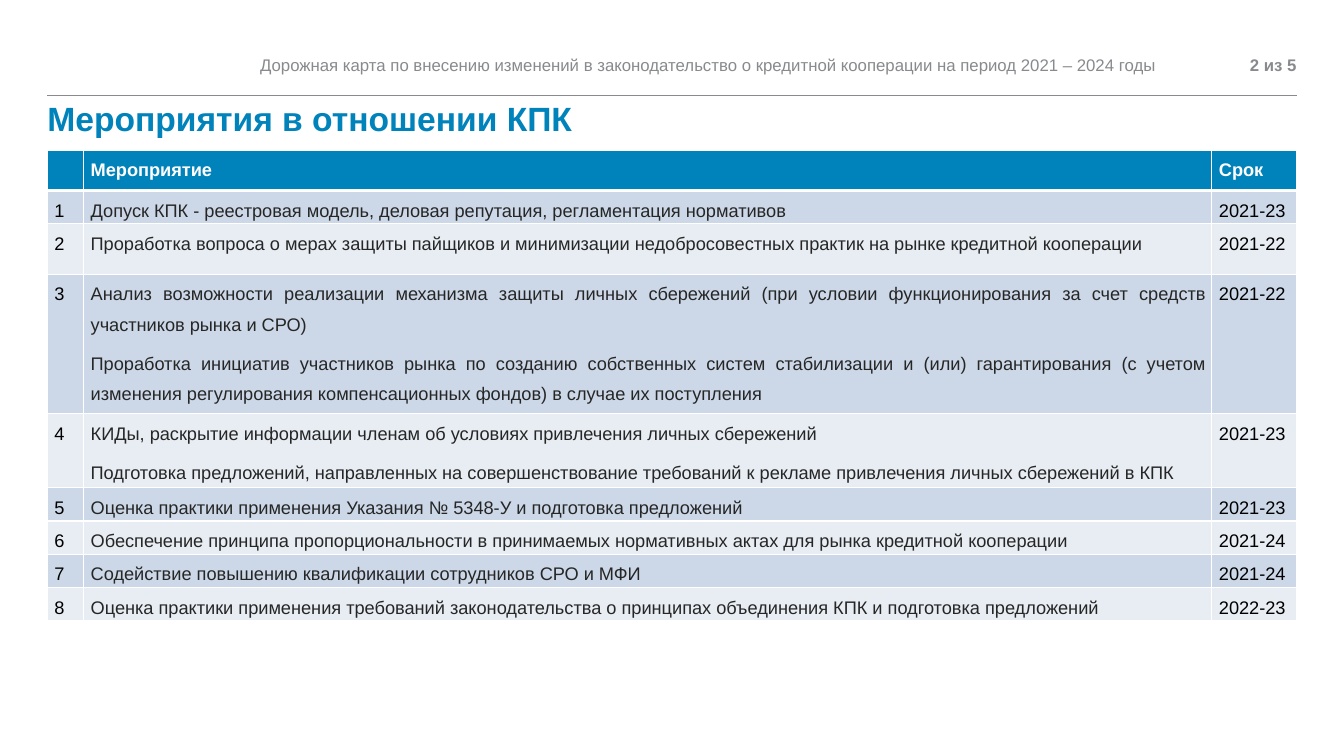
from lxml import etree
from pptx import Presentation
from pptx.dml.color import RGBColor
from pptx.enum import shapes, text
from pptx.oxml import ns
from pptx.util import Inches, Pt

BLUE = RGBColor(0x00, 0x82, 0xBB)
GREY = RGBColor(0x88, 0x8A, 0x8D)
WHITE = RGBColor(0xFF, 0xFF, 0xFF)
BLACK = RGBColor(0x00, 0x00, 0x00)
DARK = RGBColor(0x26, 0x26, 0x26)
BAND_ODD = RGBColor(0xCC, 0xD8, 0xE7)
BAND_EVEN = RGBColor(0xE7, 0xED, 0xF3)

LEFT, RIGHT = 0.47, 12.86
COLS = [0.36, 11.19, 0.84]
ROWS = [0.4, 0.33, 0.5, 0.8, 0.7] + [0.33] * 4
HEADER = [[], ["Мероприятие"], ["Срок"]]
MEASURES = [
    (["Допуск КПК - реестровая модель, деловая репутация, регламентация нормативов"], "2021-23"),
    (["Проработка вопроса о мерах защиты пайщиков и минимизации недобросовестных практик "
      "на рынке кредитной кооперации"], "2021-22"),
    (["Анализ возможности реализации механизма защиты личных сбережений (при условии "
      "функционирования за счет средств участников рынка и СРО)",
      "Проработка инициатив участников рынка по созданию собственных систем стабилизации "
      "и (или) гарантирования (с учетом изменения регулирования компенсационных фондов) "
      "в случае их поступления"], "2021-22"),
    (["КИДы, раскрытие информации членам об условиях привлечения личных сбережений",
      "Подготовка предложений, направленных на совершенствование требований к рекламе "
      "привлечения личных сбережений в КПК"], "2021-23"),
    (["Оценка практики применения Указания № 5348-У и подготовка предложений"], "2021-23"),
    (["Обеспечение принципа пропорциональности в принимаемых нормативных актах "
      "для рынка кредитной кооперации"], "2021-24"),
    (["Содействие повышению квалификации сотрудников СРО и МФИ"], "2021-24"),
    (["Оценка практики применения требований законодательства о принципах объединения КПК "
      "и подготовка предложений"], "2022-23"),
]


def apply(obj, values):
    for name, value in values.items():
        setattr(obj, name, value)


class Deck:
    font = "Arial"
    cell_paragraph = {"alignment": text.PP_ALIGN.JUSTIFY, "line_spacing": 1.5,
                      "space_after": Pt(6)}
    cell_margins = {"margin_left": Inches(0.07), "margin_right": Inches(0.07),
                    "margin_top": 0, "margin_bottom": 0}

    def __init__(self):
        self.prs = Presentation()
        apply(self.prs, {"slide_width": Inches(13.33), "slide_height": Inches(7.5)})
        self.slide = self.prs.slides.add_slide(self.prs.slide_layouts[6])

    def fill_paragraph(self, p, words, size, color, bold, para):
        apply(p, para)
        r = p.add_run()
        r.text = words
        apply(r.font, {"name": self.font, "size": Pt(size), "bold": bold})
        r.font.color.rgb = color

    def text(self, box, words, size, color, bold=False, anchor=text.MSO_ANCHOR.MIDDLE, **para):
        tf = self.slide.shapes.add_textbox(*map(Inches, box)).text_frame
        apply(tf, {"word_wrap": True, "vertical_anchor": anchor, "margin_left": 0,
                   "margin_right": 0, "margin_top": 0, "margin_bottom": 0})
        self.fill_paragraph(tf.paragraphs[0], words, size, color, bold, para)

    def rule(self, y, color, width):
        """Draw a horizontal line across the content area."""
        ends = map(Inches, (LEFT, y, RIGHT, y))
        line = self.slide.shapes.add_connector(shapes.MSO_CONNECTOR.STRAIGHT, *ends)
        line.line.color.rgb = color
        line.line.width = Pt(width)
        etree.SubElement(line._element.spPr, ns.qn("a:effectLst"))

    def border(self, cell, side, width):
        ln = etree.SubElement(cell._tc.get_or_add_tcPr(), ns.qn(f"a:ln{side}"), w=str(Pt(width)))
        fill = etree.SubElement(ln, ns.qn("a:solidFill"))
        etree.SubElement(fill, ns.qn("a:srgbClr"), val=str(WHITE))

    def cell(self, cell, lines, color, fill, bold, top, bottom):
        apply(cell, self.cell_margins)
        for side, width in (("L", 1), ("R", 1), ("T", top), ("B", bottom)):
            self.border(cell, side, width)
        cell.fill.solid()
        cell.fill.fore_color.rgb = fill
        tf = cell.text_frame
        for i, words in enumerate(lines):
            p = tf.add_paragraph() if i else tf.paragraphs[0]
            self.fill_paragraph(p, words, 13, color, bold, self.cell_paragraph)

    def table(self, top, header, body):
        frame = self.slide.shapes.add_table(
            len(ROWS), len(COLS), Inches(LEFT), Inches(top), Inches(sum(COLS)), Inches(sum(ROWS)))
        tbl = frame.table
        for col, width in zip(tbl.columns, COLS):
            col.width = Inches(width)
        for row, height in zip(tbl.rows, ROWS):
            row.height = Inches(height)
        for c, lines in enumerate(header):
            self.cell(tbl.cell(0, c), lines, WHITE, BLUE, True, 1, 3)
        for n, (measure, term) in enumerate(body, 1):
            fill = BAND_ODD if n % 2 else BAND_EVEN
            columns = (([str(n)], BLACK), (measure, DARK), ([term], BLACK))
            for c, (lines, color) in enumerate(columns):
                self.cell(tbl.cell(n, c), lines, color, fill, False, 3 if n == 1 else 1, 1)


def main():
    deck = Deck()
    deck.rule(0.95, GREY, 0.5)
    deck.text((LEFT, 1.02, 12.39, 0.66), "Мероприятия в отношении КПК", 24, BLUE, True,
              text.MSO_ANCHOR.TOP, line_spacing=0.9)
    deck.text((2.58, 0.47, 9.23, 0.35),
              "Дорожная карта по внесению изменений в законодательство о кредитной кооперации "
              "на период 2021 – 2024 годы", 12, GREY)
    deck.text((12.05, 0.47, 0.81, 0.35), "2 из 5", 12, GREY, True,
              alignment=text.PP_ALIGN.RIGHT)
    deck.table(1.49, HEADER, MEASURES)
    deck.prs.save("out.pptx")


if __name__ == "__main__":
    main()
